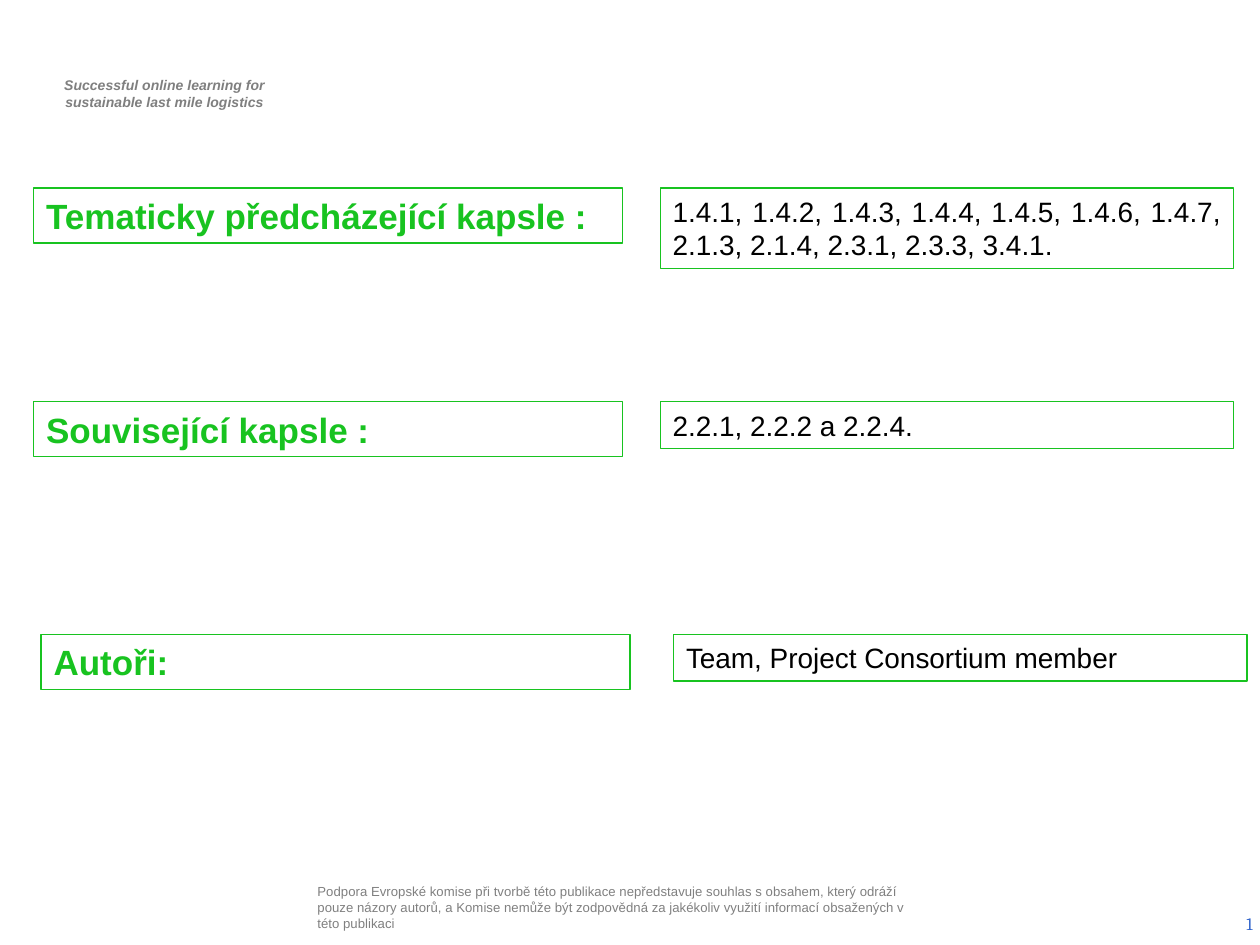
from lxml.etree import SubElement
from pptx import Presentation
from pptx.dml.color import RGBColor
from pptx.enum.shapes import MSO_SHAPE
from pptx.enum.text import MSO_ANCHOR, MSO_AUTO_SIZE, PP_ALIGN
from pptx.oxml.ns import qn
from pptx.util import Cm, Pt

# Content
HEADER = ["Successful online learning for", "sustainable last mile logistics"]
FOOTER = ("Podpora Evropské komise při tvorbě této publikace nepředstavuje "
          "souhlas s obsahem, který odráží pouze názory autorů, a Komise nemůže "
          "být zodpovědná za jakékoliv využití informací obsažených v této publikaci")
PAGE = "2"
# label, text, text alignment, top, label left, text left, text height (cm)
ROWS = [
    ("Tematicky předcházející kapsle :",
     "1.4.1, 1.4.2, 1.4.3, 1.4.4, 1.4.5, 1.4.6, 1.4.7, "
     "2.1.3, 2.1.4, 2.3.1, 2.3.3, 3.4.1.",
     PP_ALIGN.JUSTIFY, 3.79, 0.68, 13.31, 1.62),
    ("Související kapsle :", "2.2.1, 2.2.2 a 2.2.4.",
     PP_ALIGN.JUSTIFY, 8.1, 0.68, 13.31, 0.94),
    ("Autoři:", "Team, Project Consortium member",
     PP_ALIGN.LEFT, 12.79, 0.83, 13.58, 0.94),
]
LABEL_W, LABEL_H, TEXT_W = 11.87, 1.11, 11.56
GREEN, BLACK, WHITE = "18C320", "000000", "FFFFFF"


def rgb(value):
    return RGBColor.from_string(value)


def write(sp, lines, size, color, align=PP_ALIGN.LEFT, font="Arial",
          bold=False, italic=False, anchor=MSO_ANCHOR.TOP, inset=(0.25, 0.13)):
    tf = sp.text_frame
    tf.word_wrap = True
    tf.vertical_anchor = anchor
    tf.margin_left = tf.margin_right = Cm(inset[0])
    tf.margin_top = tf.margin_bottom = Cm(inset[1])
    tf.text = "\n".join(lines)
    for p in tf.paragraphs:
        p.alignment = align
        f = p.font
        f.name, f.size, f.bold, f.italic = font, Pt(size), bold, italic
        f.color.rgb = rgb(color)
    return tf


def textbox(s, x, y, w, h):
    return s.shapes.add_textbox(Cm(x), Cm(y), Cm(w), Cm(h))


def framed(s, x, y, w, h, text, size, color, **style):
    sp = s.shapes.add_shape(MSO_SHAPE.RECTANGLE, Cm(x), Cm(y), Cm(w), Cm(h))
    sp.shadow.inherit = False
    sp.fill.solid()
    sp.fill.fore_color.rgb = rgb(WHITE)
    sp.line.color.rgb = rgb(GREEN)
    sp.line.width = Pt(0.75)
    tf = write(sp, [text], size, color, **style)
    tf.auto_size = MSO_AUTO_SIZE.SHAPE_TO_FIT_TEXT


def main():
    prs = Presentation()
    prs.slide_width, prs.slide_height = Cm(25.4), Cm(19.05)
    s = prs.slides.add_slide(prs.slide_layouts[6])

    # Header and footer
    write(textbox(s, 0.74, 1.42, 5.16, 0.94), HEADER, 8, "7F7F7F",
          align=PP_ALIGN.CENTER, bold=True, italic=True)
    write(textbox(s, 6.3, 17.65, 12.52, 1.27), [FOOTER], 7.5, "808080",
          anchor=MSO_ANCHOR.MIDDLE, inset=(0.1, 0.1))

    # Slide number field
    tf = write(textbox(s, 19.58, 18.11, 5.92, 1.02), [PAGE], 10, "3366CC",
               align=PP_ALIGN.RIGHT, font="Cambria", anchor=MSO_ANCHOR.MIDDLE)
    r = tf.paragraphs[0].runs[0]
    r.font.size = Pt(10)
    r.font.name = "Cambria"
    r.font.color.rgb = rgb("3366CC")
    fld = SubElement(tf.paragraphs[0]._p, qn("a:fld"), type="slidenum",
                     id="{B6F15528-21DE-4FAA-801E-634DDDAF4B2B}")
    r._r.addprevious(fld)
    fld.extend(list(r._r))
    fld.getparent().remove(r._r)
    fld.find(qn("a:t")).text = PAGE

    # Label and text pairs
    for label, text, align, top, label_x, text_x, text_h in ROWS:
        framed(s, label_x, top, LABEL_W, LABEL_H, label, 20, GREEN, bold=True)
        framed(s, text_x, top, TEXT_W, text_h, text, 16, BLACK, align=align)

    prs.save("out.pptx")


if __name__ == "__main__":
    main()
